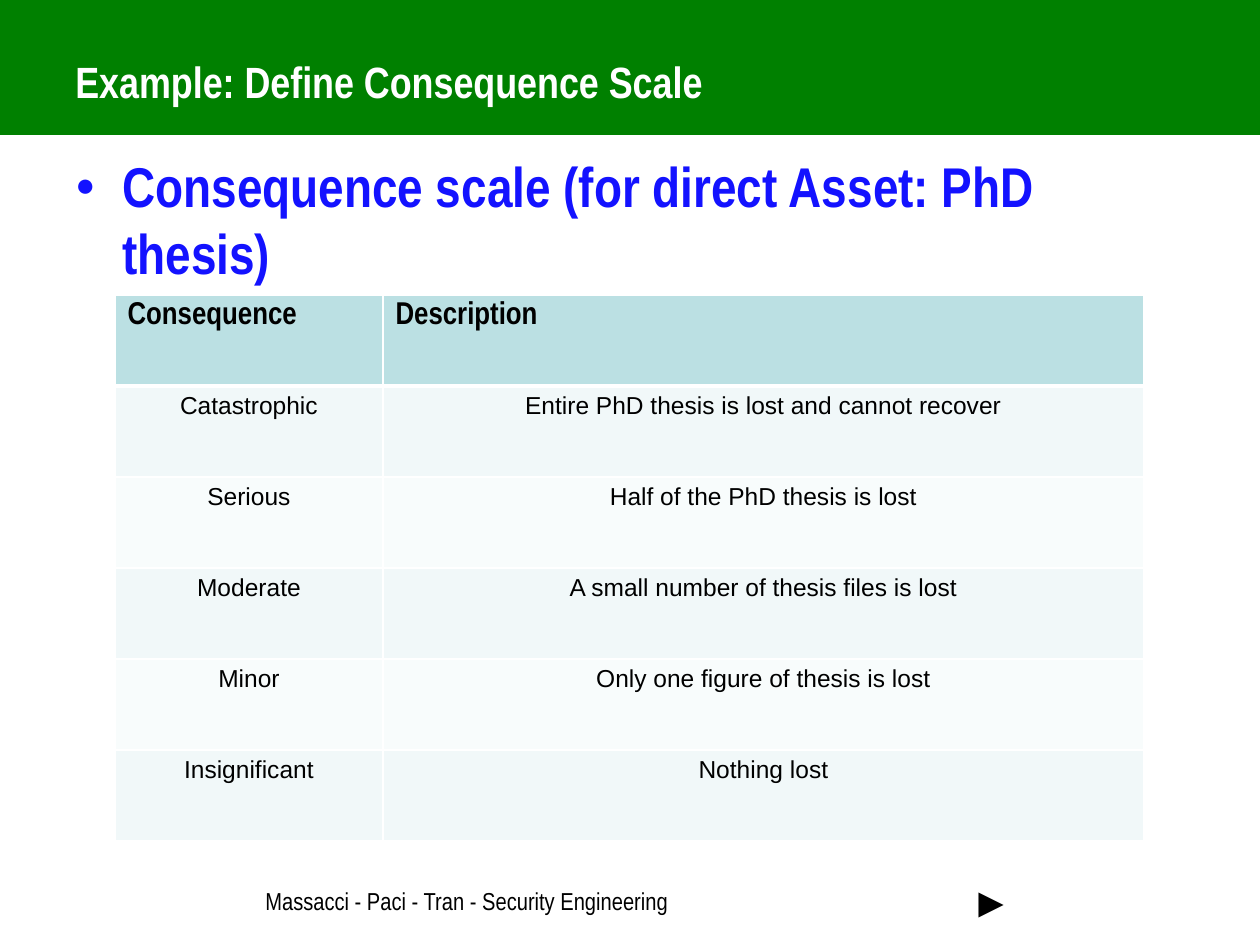
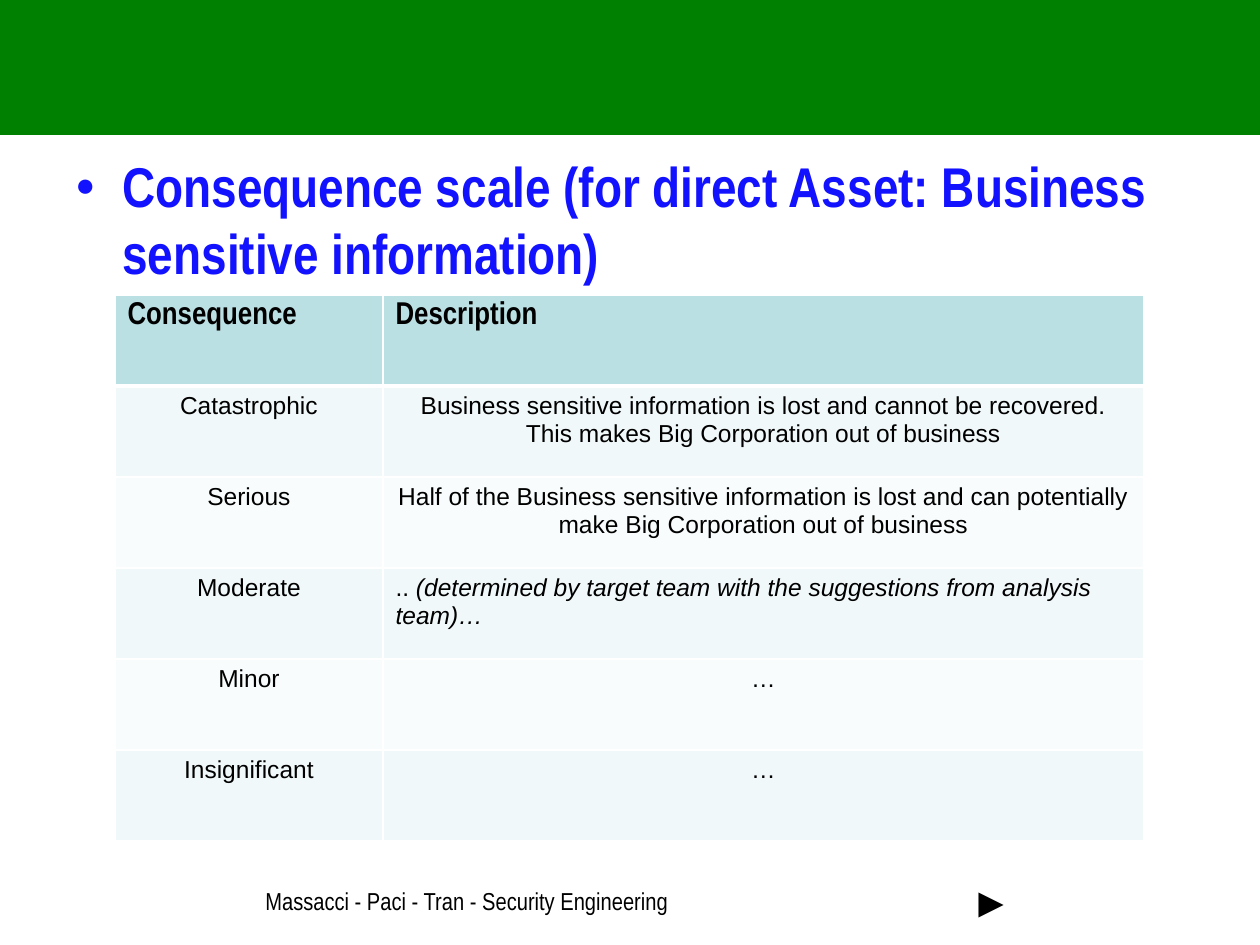
from typing import NamedTuple

import pptx
import pptx.dml.color
import pptx.enum.shapes
import pptx.enum.text
import pptx.oxml
import pptx.oxml.ns
import pptx.util

EMU_PER_PX = 914400 / 126
SLIDE_WIDTH, SLIDE_HEIGHT = 1260, 945
BAND_HEIGHT = 135

GREEN, BLUE, BLACK, WHITE = "008000", "1312FF", "000000", "FFFFFF"
HEADER_FILL = "BBE0E3"
ROW_FILLS = ("F1F8F9", "F8FCFC")

ALIGN = pptx.enum.text.PP_ALIGN
ANCHOR = pptx.enum.text.MSO_ANCHOR


class Box(NamedTuple):
    left: int
    top: int
    width: int
    height: int


class TextStyle(NamedTuple):
    size: int
    color: str = BLACK
    bold: bool = False
    name: str = "Arial Narrow"


class Description(NamedTuple):
    text: str
    remark: str = ""


class ScaleSlide(NamedTuple):
    title: str
    heading: str
    descriptions: tuple[Description, ...]


TITLE_BOX = Box(63, 38, 1134, 87)
HEADING_BOX = Box(63, 145, 1134, 699)
FOOTER_BOX = Box(253, 880, 615, 43)
ARROW_BOX = Box(958, 869, 262, 76)
TABLE_LEFT, TABLE_TOP = 115, 295
COLUMN_WIDTHS = (268, 761)
ROW_HEIGHT = 91
HEADING_INDENT = 47

TITLE_STYLE = TextStyle(25, WHITE, bold=True)
HEADING_STYLE = TextStyle(32, BLUE, bold=True)
FOOTER_STYLE = TextStyle(14)
ARROW_STYLE = TextStyle(24)
HEADER_STYLE = TextStyle(18, bold=True)
CELL_STYLE = TextStyle(14, name="Arial")

COLUMN_TITLES = ("Consequence", "Description")
LEVELS = ("Catastrophic", "Serious", "Moderate", "Minor", "Insignificant")

SLIDES = (
    ScaleSlide(
        "Example: Define Consequence Scale",
        "Consequence scale (for direct Asset: PhD thesis)",
        (
            Description("Entire PhD thesis is lost and cannot recover"),
            Description("Half of the PhD thesis is lost"),
            Description("A small number of thesis files is lost"),
            Description("Only one figure of thesis is lost"),
            Description("Nothing lost"),
        ),
    ),
    ScaleSlide(
        "",
        "Consequence scale (for direct Asset: Business sensitive information)",
        (
            Description("Business sensitive information is lost and cannot be recovered. "
                        "This makes Big Corporation out of business"),
            Description("Half of the Business sensitive information is lost and can "
                        "potentially make Big Corporation out of business"),
            Description("..", " (determined by target team with the suggestions "
                              "from analysis team)…"),
            Description("…"),
            Description("…"),
        ),
    ),
)


def px(length: float) -> pptx.util.Emu:
    return pptx.util.Emu(round(length * EMU_PER_PX))


def rgb(color: str) -> pptx.dml.color.RGBColor:
    return pptx.dml.color.RGBColor.from_string(color)


def xml_elements(xml: str) -> list:
    """Parse sibling elements that use the DrawingML prefix."""
    namespace = pptx.oxml.ns.nsdecls("a")
    return list(pptx.oxml.parse_xml(f"<a:group {namespace}>{xml}</a:group>"))


def style_run(run, style: TextStyle, italic: bool = False) -> None:
    run.font.name = style.name
    run.font.size = pptx.util.Pt(style.size)
    run.font.bold = style.bold
    run.font.italic = italic
    run.font.color.rgb = rgb(style.color)


def add_text(slide, box: Box, text: str, style: TextStyle, anchor=ANCHOR.TOP):
    """Add a one-paragraph text box and return the paragraph."""
    text_frame = slide.shapes.add_textbox(*map(px, box)).text_frame
    text_frame.word_wrap = True
    text_frame.vertical_anchor = anchor
    text_frame.text = text
    paragraph = text_frame.paragraphs[0]
    style_run(paragraph.runs[0], style)
    return paragraph


def add_bullet(paragraph, color: str) -> None:
    properties = paragraph._p.get_or_add_pPr()
    properties.set("marL", str(px(HEADING_INDENT)))
    properties.set("indent", str(-px(HEADING_INDENT)))
    properties.extend(xml_elements(
        f'<a:buClr><a:srgbClr val="{color}"/></a:buClr>'
        '<a:buSzPct val="59000"/>'
        '<a:buFont typeface="Arial"/>'
        '<a:buChar char="●"/>'))


def add_band(slide) -> None:
    band = slide.shapes.add_shape(pptx.enum.shapes.MSO_SHAPE.RECTANGLE,
                                  *map(px, Box(0, 0, SLIDE_WIDTH, BAND_HEIGHT)))
    band.shadow.inherit = False
    band.fill.solid()
    band.fill.fore_color.rgb = rgb(GREEN)
    band.line.fill.background()


def set_borders(cell, top: int, bottom: int) -> None:
    """Give a cell white borders, 1 pt at the sides."""
    properties = cell._tc.get_or_add_tcPr()
    for side, points in (("L", 1), ("R", 1), ("T", top), ("B", bottom)):
        properties.extend(xml_elements(
            f'<a:ln{side} w="{pptx.util.Pt(points)}"><a:solidFill>'
            f'<a:srgbClr val="{WHITE}"/></a:solidFill></a:ln{side}>'))


def fill_cell(cell, content: Description, style: TextStyle, fill: str, align) -> None:
    cell.fill.solid()
    cell.fill.fore_color.rgb = rgb(fill)
    cell.text_frame.text = content.text
    paragraph = cell.text_frame.paragraphs[0]
    paragraph.alignment = align
    style_run(paragraph.runs[0], style)
    if content.remark:
        remark = paragraph.add_run()
        remark.text = content.remark
        style_run(remark, style, italic=True)


def add_scale_table(slide, descriptions: tuple[Description, ...]) -> None:
    row_count = len(LEVELS) + 1
    box = Box(TABLE_LEFT, TABLE_TOP, sum(COLUMN_WIDTHS), ROW_HEIGHT * row_count)
    table = slide.shapes.add_table(row_count, len(COLUMN_WIDTHS), *map(px, box)).table
    table.horz_banding = False
    for column, width in zip(table.columns, COLUMN_WIDTHS):
        column.width = px(width)
    for row in table.rows:
        row.height = px(ROW_HEIGHT)

    for column, title in enumerate(COLUMN_TITLES):
        cell = table.cell(0, column)
        set_borders(cell, top=1, bottom=3)
        fill_cell(cell, Description(title), HEADER_STYLE, HEADER_FILL, ALIGN.LEFT)
    for row, (level, description) in enumerate(zip(LEVELS, descriptions), start=1):
        for column, content in enumerate((Description(level), description)):
            cell = table.cell(row, column)
            set_borders(cell, top=3 if row == 1 else 1, bottom=1)
            align = ALIGN.LEFT if content.remark else ALIGN.CENTER
            fill_cell(cell, content, CELL_STYLE, ROW_FILLS[(row - 1) % 2], align)


def add_scale_slide(presentation, content: ScaleSlide) -> None:
    slide = presentation.slides.add_slide(presentation.slide_layouts[6])
    add_band(slide)
    if content.title:
        add_text(slide, TITLE_BOX, content.title, TITLE_STYLE, ANCHOR.MIDDLE)
    heading = add_text(slide, HEADING_BOX, content.heading, HEADING_STYLE)
    add_bullet(heading, BLUE)
    add_text(slide, FOOTER_BOX, "Massacci - Paci - Tran - Security Engineering", FOOTER_STYLE)
    add_text(slide, ARROW_BOX, "►", ARROW_STYLE)
    add_scale_table(slide, content.descriptions)


def main() -> None:
    presentation = pptx.Presentation()
    presentation.slide_width = px(SLIDE_WIDTH)
    presentation.slide_height = px(SLIDE_HEIGHT)
    for content in SLIDES:
        add_scale_slide(presentation, content)
    presentation.save("out.pptx")


if __name__ == "__main__":
    main()
